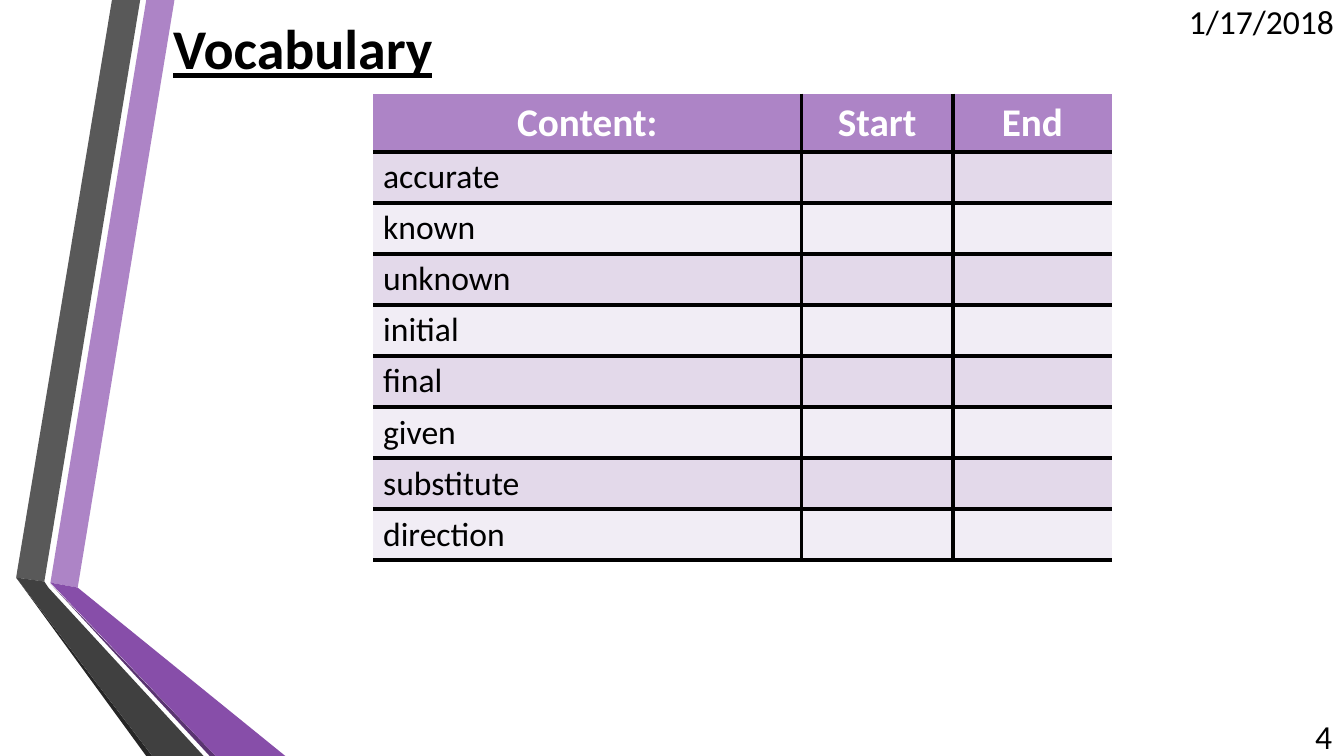
import pptx
import pptx.dml.color
import pptx.enum.text
import pptx.oxml
import pptx.oxml.ns
import pptx.util

ALIGN = pptx.enum.text.PP_ALIGN
ANCHOR = pptx.enum.text.MSO_ANCHOR
BLACK, WHITE, LILAC = "000000", "FFFFFF", "AD84C6"
BANDS = ("E3D9EA", "F1EDF5")


def color(hex_string):
    return pptx.dml.color.RGBColor.from_string(hex_string)


class SlideBuilder:
    """Places elements on one slide; lengths are percent of its size."""

    font = "Calibri"
    border_width = pptx.util.Pt(3)

    def __init__(self, prs):
        self.width, self.height = prs.slide_width, prs.slide_height
        self.s = prs.slides.add_slide(prs.slide_layouts[6])

    def x(self, share):
        return round(self.width * share / 100)

    def y(self, share):
        return round(self.height * share / 100)

    def box(self, left, top, width, height):
        return self.x(left), self.y(top), self.x(width), self.y(height)

    def format(self, p, size, fill, bold=False, underline=False, align=ALIGN.LEFT):
        p.alignment = align
        for r in p.runs:
            r.font.name, r.font.size = self.font, pptx.util.Pt(size)
            r.font.bold, r.font.underline = bold, underline
            r.font.color.rgb = color(fill)

    def polygon(self, fill, points):
        corners = [(self.x(px), self.y(py)) for px, py in points]
        builder = self.s.shapes.build_freeform(*corners[0])
        builder.add_line_segments(corners[1:], close=True)
        sp = builder.convert_to_shape()
        sp.shadow.inherit = False
        sp.fill.solid()
        sp.fill.fore_color.rgb = color(fill)
        sp.line.fill.background()

    def text(self, text, place, size, **style):
        tf = self.s.shapes.add_textbox(*self.box(*place)).text_frame
        tf.word_wrap = True
        tf.vertical_anchor = ANCHOR.MIDDLE
        tf.text = text
        self.format(tf.paragraphs[0], size, BLACK, **style)

    def borders(self, cell, visible):
        tc_pr = cell._tc.get_or_add_tcPr()
        for index, side in enumerate("LRTB"):
            paint = (f'<a:solidFill><a:srgbClr val="{BLACK}"/></a:solidFill>'
                     if side in visible else "<a:noFill/>")
            tc_pr.insert(index, pptx.oxml.parse_xml(
                f'<a:ln{side} {pptx.oxml.ns.nsdecls("a")} '
                f'w="{self.border_width}">{paint}</a:ln{side}>'))

    def table(self, left, top, columns, header, words, header_height, row_height):
        heights = [header_height] + [row_height] * len(words)
        place = self.box(left, top, sum(columns), sum(heights))
        table = self.s.shapes.add_table(len(heights), len(columns), *place).table
        for column, share in zip(table.columns, columns):
            column.width = self.x(share)
        for row, share in zip(table.rows, heights):
            row.height = self.y(share)
        for i, row in enumerate([header] + [[word] for word in words]):
            for j in range(len(columns)):
                cell = table.cell(i, j)
                cell.fill.solid()
                cell.fill.fore_color.rgb = color(BANDS[(i - 1) % 2] if i else LILAC)
                # Inner lines and the bottom edge only
                self.borders(cell, "B" + "T" * (i > 0) + "L" * (j > 0)
                             + "R" * (j < len(columns) - 1))
                if j >= len(row):
                    continue
                cell.text_frame.text = row[j]
                p = cell.text_frame.paragraphs[0]
                if i:
                    self.format(p, 24, BLACK)
                else:
                    cell.vertical_anchor = ANCHOR.MIDDLE
                    self.format(p, 28, WHITE, bold=True, align=ALIGN.CENTER)


def main():
    prs = pptx.Presentation()
    prs.slide_width = pptx.util.Inches(13.33)
    prs.slide_height = pptx.util.Inches(7.5)
    slide = SlideBuilder(prs)

    # Folded ribbons on the left
    slide.polygon(LILAC, [(3.75, 77.07), (5.78, 77.73), (12.98, 0), (10.88, 0)])
    slide.polygon("595959", [(10.43, 0), (8.33, 0), (1.2, 76.4), (3.3, 76.93)])
    slide.polygon("262626", [(1.2, 76.4), (10.88, 100), (11.33, 100)])
    slide.polygon("5A3471", [(3.75, 77.2), (15.6, 100), (16.05, 100)])
    slide.polygon("874EA9", [(3.75, 77.07), (16.05, 100), (21.23, 100), (5.78, 77.73)])
    slide.polygon("404040", [(15.15, 100), (3.6, 77.73), (3.3, 76.93),
                             (1.2, 76.4), (11.33, 100)])

    # Title, date and slide number
    slide.text("Vocabulary", (12.15, 0.13, 82.22, 12.27), 40, bold=True, underline=True)
    slide.text("1/17/2018", (85.15, 0.13, 14.85, 5.33), 24, align=ALIGN.RIGHT)
    slide.text("4", (94.37, 94.67, 5.48, 5.33), 24, align=ALIGN.RIGHT)

    # Vocabulary table
    slide.table(27.76, 12.4, columns=(31.88, 11.25, 11.85),
                header=["Content:", "Start", "End"],
                words=["accurate", "known", "unknown", "initial",
                       "final", "given", "substitute", "direction"],
                header_height=7.67, row_height=6.76)

    prs.save("out.pptx")


if __name__ == "__main__":
    main()
